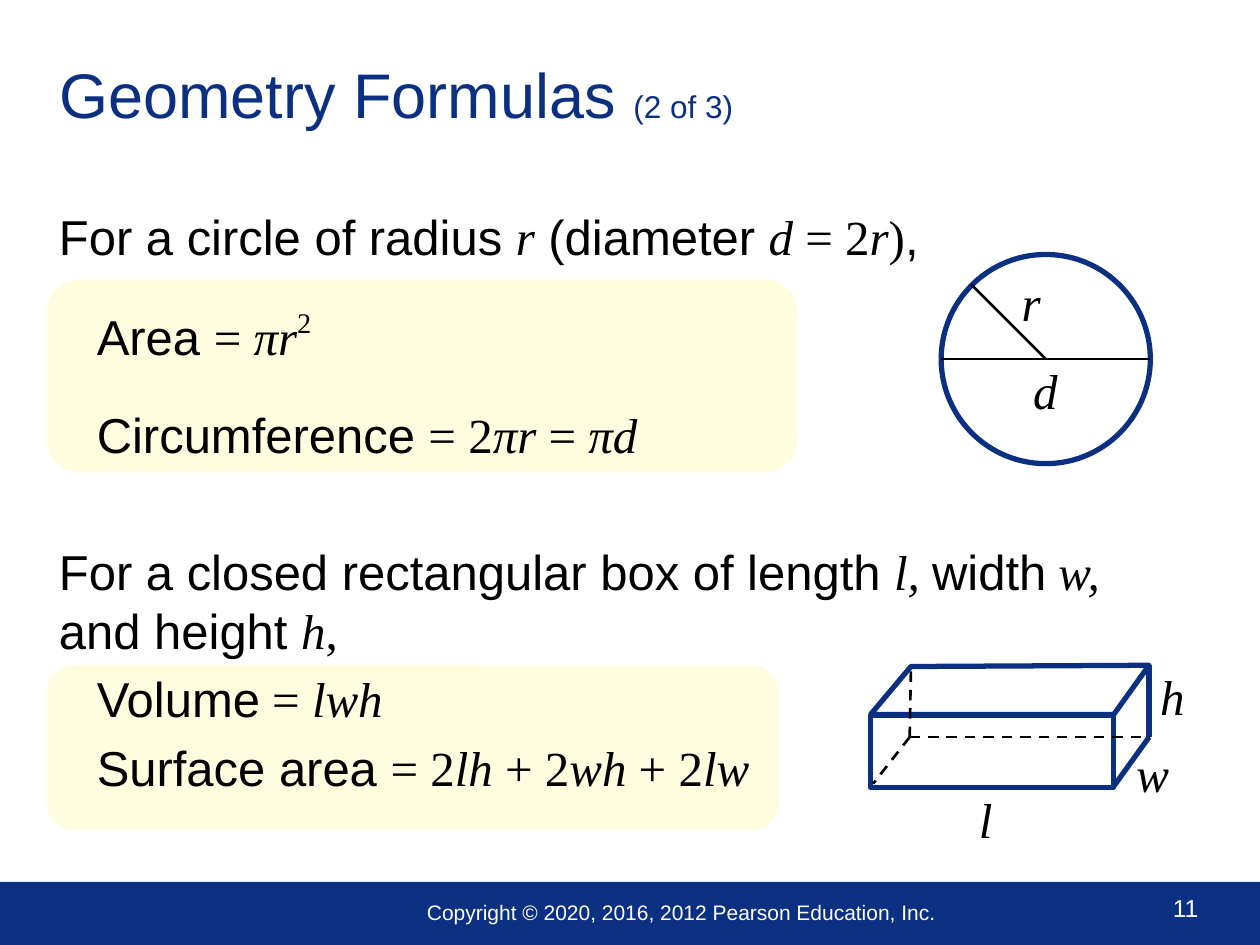
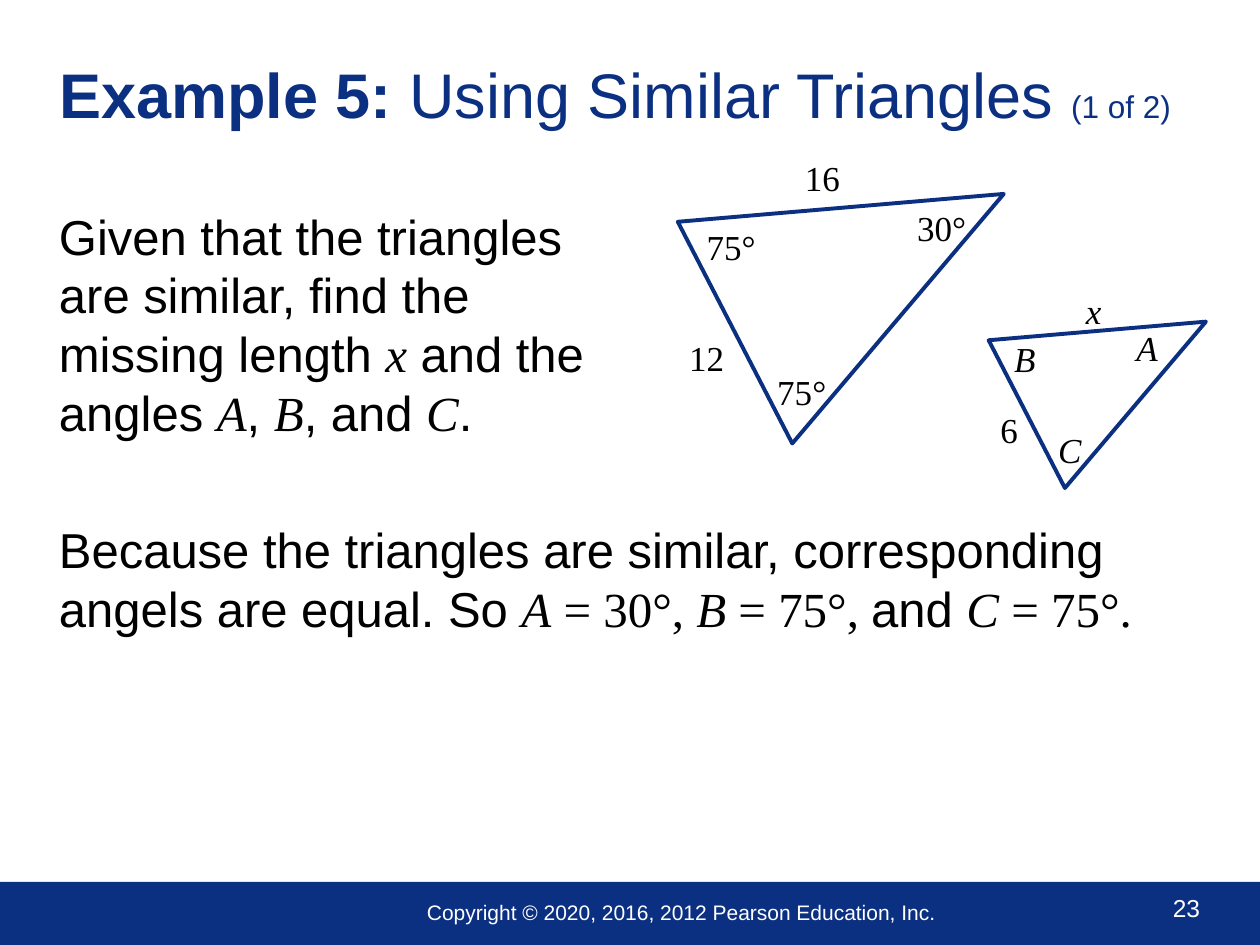
from lxml import etree
from pptx import Presentation
from pptx.dml.color import RGBColor
from pptx.enum.dml import MSO_LINE
from pptx.enum.shapes import MSO_CONNECTOR, MSO_SHAPE
from pptx.enum.text import MSO_ANCHOR, MSO_AUTO_SIZE, PP_ALIGN
from pptx.oxml.ns import qn
from pptx.util import Inches, Pt

STRAIGHT = MSO_CONNECTOR.STRAIGHT
RECTANGLE = MSO_SHAPE.RECTANGLE
ROUNDED = MSO_SHAPE.ROUNDED_RECTANGLE
ELLIPSE = MSO_SHAPE.OVAL
TRIANGLE = MSO_SHAPE.ISOSCELES_TRIANGLE
DASH = MSO_LINE.DASH
LEFT = PP_ALIGN.LEFT
TOP = MSO_ANCHOR.TOP
MIDDLE = MSO_ANCHOR.MIDDLE
NO_FIT = MSO_AUTO_SIZE.NONE

COLORS = {"navy": "0B3081", "cream": "FFFDE0", "black": "000000", "white": "FFFFFF"}
SANS = "Arial"
SERIF = "Times New Roman"
COPYRIGHT = "Copyright © 2020, 2016, 2012 Pearson Education, Inc."
BODY_SIZE = 28
BODY_LINE = 33.5
FORMULA_INDENT = 0.3


def color(name):
    return RGBColor.from_string(COLORS[name])


def style_paragraph(paragraph, size, ink, font=None, italic=None):
    paragraph.alignment = LEFT
    paragraph.font.size = Pt(size)
    paragraph.font.color.rgb = color(ink)
    if font:
        paragraph.font.name = font
    if italic is not None:
        paragraph.font.italic = italic


def add_label(slide, text, left, top, width, height, size, font, ink="black", italic=False):
    label = slide.shapes.add_textbox(Inches(left), Inches(top), Inches(width), Inches(height))
    label.text_frame.word_wrap = True
    paragraph = label.text_frame.paragraphs[0]
    paragraph.text = text
    style_paragraph(paragraph, size, ink, font, italic)


def add_figure_labels(slide, labels, width, height, size):
    for text, left, top in labels:
        add_label(slide, text, left, top, width, height, size, SERIF, italic=text.isalpha())


def add_preset(slide, preset, left, top, width, height, fill=None, line=None, weight=3):
    shape = slide.shapes.add_shape(preset, Inches(left), Inches(top), Inches(width), Inches(height))
    finish_shape(shape, fill, line, weight)
    return shape


def finish_shape(shape, fill, line, weight):
    shape.shadow.inherit = False
    if fill:
        shape.fill.solid()
        shape.fill.fore_color.rgb = color(fill)
    else:
        shape.fill.background()
    if line:
        shape.line.color.rgb = color(line)
        shape.line.width = Pt(weight)
    else:
        shape.line.fill.background()


def add_outline(slide, points):
    corners = [(Inches(x), Inches(y)) for x, y in points]
    builder = slide.shapes.build_freeform(*corners[0])
    builder.add_line_segments(corners[1:], close=True)
    finish_shape(builder.convert_to_shape(), None, "navy", 3)


def add_line(slide, start, end, ink="black", weight=1.5, dashed=False):
    x1, y1 = start
    x2, y2 = end
    line = slide.shapes.add_connector(STRAIGHT, Inches(x1), Inches(y1), Inches(x2), Inches(y2))
    line.line.color.rgb = color(ink)
    line.line.width = Pt(weight)
    if dashed:
        line.line.dash_style = DASH
    etree.SubElement(line._element.spPr, qn("a:effectLst"))


def add_body_runs(paragraph, runs):
    for text, kind in runs:
        for number, part in enumerate(text.split("\n")):
            if number:
                paragraph.add_line_break()
            run = paragraph.add_run()
            run.text = part
            run.font.name = SANS if kind == "text" else SERIF
            run.font.italic = kind == "var"
            if kind == "power":
                run._r.get_or_add_rPr().set("baseline", "45000")


def add_body(slide, paragraphs):
    body = slide.shapes.add_textbox(Inches(0.37), Inches(1.59), Inches(9.13), Inches(5.2))
    frame = body.text_frame
    frame.word_wrap = True
    frame.vertical_anchor = TOP
    for number, (space_before, indent, runs) in enumerate(paragraphs):
        paragraph = frame.add_paragraph() if number else frame.paragraphs[0]
        if indent:
            properties = paragraph._p.get_or_add_pPr()
            properties.set("marL", str(Inches(indent)))
            properties.set("indent", "0")
        paragraph.line_spacing = Pt(BODY_LINE)
        paragraph.space_before = Pt(space_before)
        add_body_runs(paragraph, runs)
        style_paragraph(paragraph, BODY_SIZE, "black")


def add_title(slide, topic, part, lead=""):
    title = slide.shapes.title
    title.left, title.top = Inches(0.37), Inches(0.17)
    title.width, title.height = Inches(9.13), Inches(1.14)
    frame = title.text_frame
    frame.word_wrap = True
    frame.auto_size = NO_FIT
    frame.vertical_anchor = MIDDLE
    paragraph = frame.paragraphs[0]
    if lead:
        lead_run = paragraph.add_run()
        lead_run.text = lead
        lead_run.font.bold = True
    paragraph.add_run().text = topic
    part_run = paragraph.add_run()
    part_run.text = part
    part_run.font.size = Pt(18)
    style_paragraph(paragraph, 36, "navy", SANS)


def add_footer(slide, number):
    add_preset(slide, RECTANGLE, 0, 7, 10, 0.5, fill="navy")
    add_label(slide, str(number), 9.21, 7.04, 0.74, 0.34, 14, SANS, "white")
    add_label(slide, COPYRIGHT, 3.29, 7.09, 4.34, 0.3, 12, SANS, "white")


def start_slide(deck, number, topic, part, lead=""):
    slide = deck.slides.add_slide(deck.slide_layouts[5])
    add_footer(slide, number)
    add_title(slide, topic, part, lead)
    return slide


def draw_circle(slide):
    left, top, diameter = 7.47, 2.02, 1.66
    center = (left + diameter / 2, top + diameter / 2)
    add_preset(slide, ELLIPSE, left, top, diameter, diameter, line="navy")
    add_line(slide, (left, center[1]), (left + diameter, center[1]))
    add_line(slide, (7.71, 2.26), center)
    add_figure_labels(slide, [("d", 8.1, 2.81), ("r", 8.01, 2.11)], 0.41, 0.57, 28)


def draw_box(slide):
    back_left, back_right = (7.23, 5.29), (9.12, 5.28)
    hidden_corner, right_corner = (7.22, 5.85), (9.12, 5.85)
    add_preset(slide, RECTANGLE, 6.91, 5.68, 1.93, 0.57, line="navy")
    add_outline(slide, [back_left, back_right, (8.84, 5.67), (6.91, 5.67)])
    for start, end in [((8.84, 6.24), right_corner), (right_corner, back_right)]:
        add_line(slide, start, end, "navy", 3)
    for end in [(6.93, 6.22), back_left, right_corner]:
        add_line(slide, hidden_corner, end, dashed=True)
    labels = [("l", 7.67, 6.22), ("w", 8.92, 5.85), ("h", 9.11, 5.24)]
    add_figure_labels(slide, labels, 0.41, 0.57, 28)


def draw_similar_triangles(slide):
    for left, top, width, height in [(5.91, 0.89, 1.98, 2.4), (8.2, 2.12, 1.32, 1.6)]:
        triangle = add_preset(slide, TRIANGLE, left, top, width, height, line="navy", weight=2.25)
        triangle.rotation = 62.7
    labels = [
        ("75°", 5.51, 1.74), ("75°", 6.07, 2.89), ("30°", 7.18, 1.59),
        ("12", 5.37, 2.62), ("16", 6.29, 1.19),
        ("B", 7.95, 2.63), ("C", 8.3, 3.35), ("A", 8.92, 2.54),
        ("6", 7.84, 3.19), ("x", 8.52, 2.25),
    ]
    add_figure_labels(slide, labels, 0.69, 0.44, 20)


def build_formulas_slide(deck):
    slide = start_slide(deck, 11, "Geometry Formulas ", "(2 of 3)")
    add_preset(slide, ROUNDED, 0.37, 5.28, 5.81, 1.31, fill="cream")
    add_preset(slide, ROUNDED, 0.37, 2.22, 5.96, 1.53, fill="cream")
    add_body(slide, [
        (0, 0, [("For a circle of radius ", "text"), ("r", "var"), (" (diameter ", "text"),
                ("d", "var"), (" = 2", "math"), ("r", "var"), (")", "math"), (",", "text")]),
        (23.5, FORMULA_INDENT, [("Area ", "text"), ("= ", "math"), ("πr", "var"),
                                ("2", "power")]),
        (22.5, FORMULA_INDENT, [("Circumference ", "text"), ("= 2", "math"), ("πr ", "var"),
                                ("= ", "math"), ("πd", "var")]),
        (45, 0, [("For a closed rectangular box of length ", "text"), ("l, ", "var"),
                 ("width", "text"), (" w, ", "var"), ("and height ", "text"),
                 ("h", "var"), (",", "math")]),
        (5.6, FORMULA_INDENT, [("Volume", "text"), (" = ", "math"), ("lwh", "var")]),
        (5.6, FORMULA_INDENT, [("Surface area ", "text"), ("= 2", "math"), ("lh", "var"),
                               (" + 2", "math"), ("wh", "var"), (" + 2", "math"),
                               ("lw", "var")]),
    ])
    draw_circle(slide)
    draw_box(slide)


def build_triangles_slide(deck):
    slide = start_slide(deck, 23, "Using Similar Triangles ", "(1 of 2)", "Example 5: ")
    add_body(slide, [
        (0, 0, [("Given that the triangles \nare similar, find the \nmissing length ", "text"),
                ("x", "var"), (" and the \nangles ", "text"), ("A", "var"), (", ", "text"),
                ("B", "var"), (", and ", "text"), ("C", "var"), (".", "text")]),
        (45, 0, [("Because the triangles are similar, corresponding angels are equal. So ", "text"),
                 ("A", "var"), (" = 30°, ", "math"), ("B", "var"), (" = 75°, ", "math"),
                 ("and ", "text"), ("C", "var"), (" = 75°.", "math")]),
    ])
    draw_similar_triangles(slide)


def main():
    deck = Presentation()
    deck.slide_width, deck.slide_height = Inches(10), Inches(7.5)
    build_formulas_slide(deck)
    build_triangles_slide(deck)
    deck.save("out.pptx")


if __name__ == "__main__":
    main()
